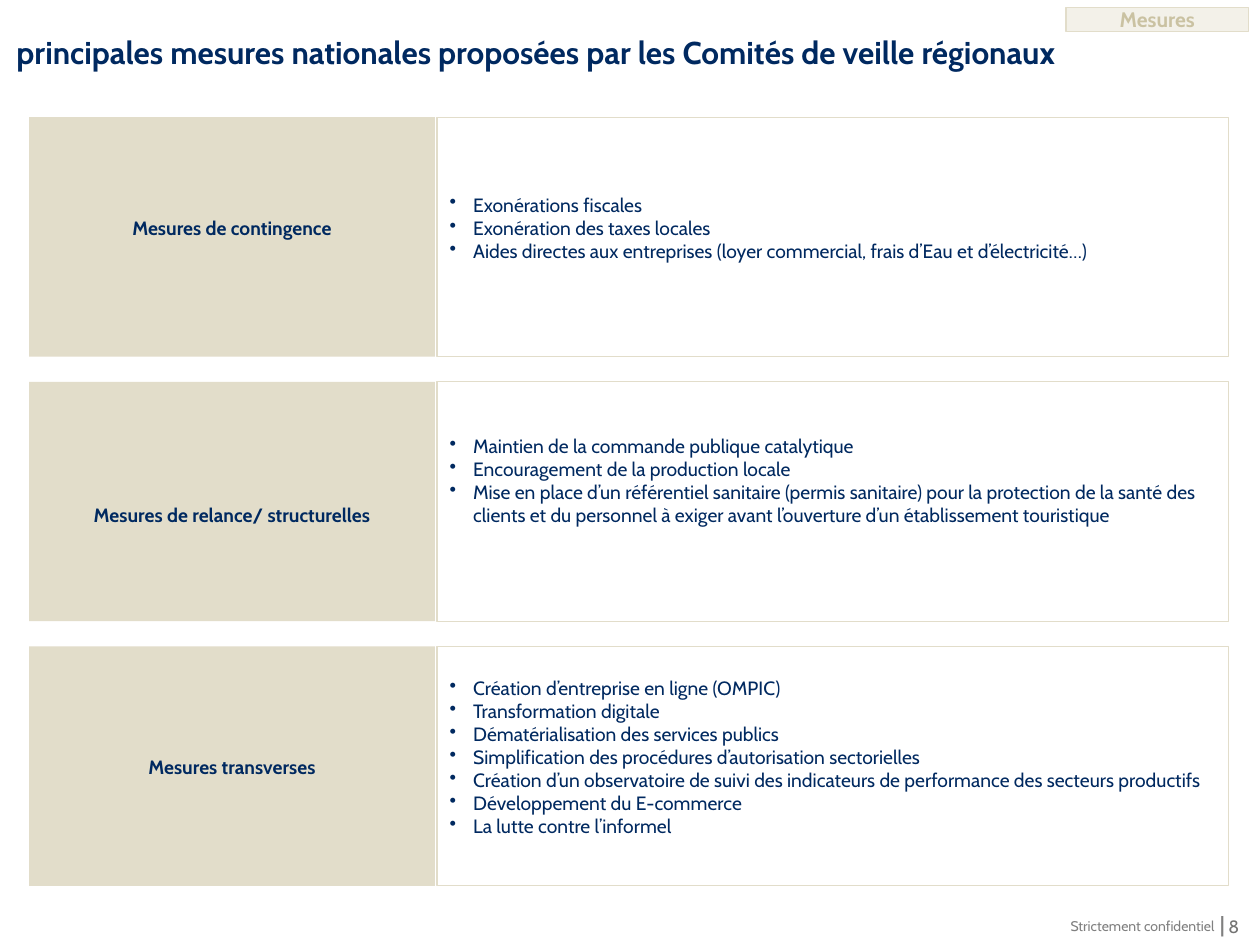
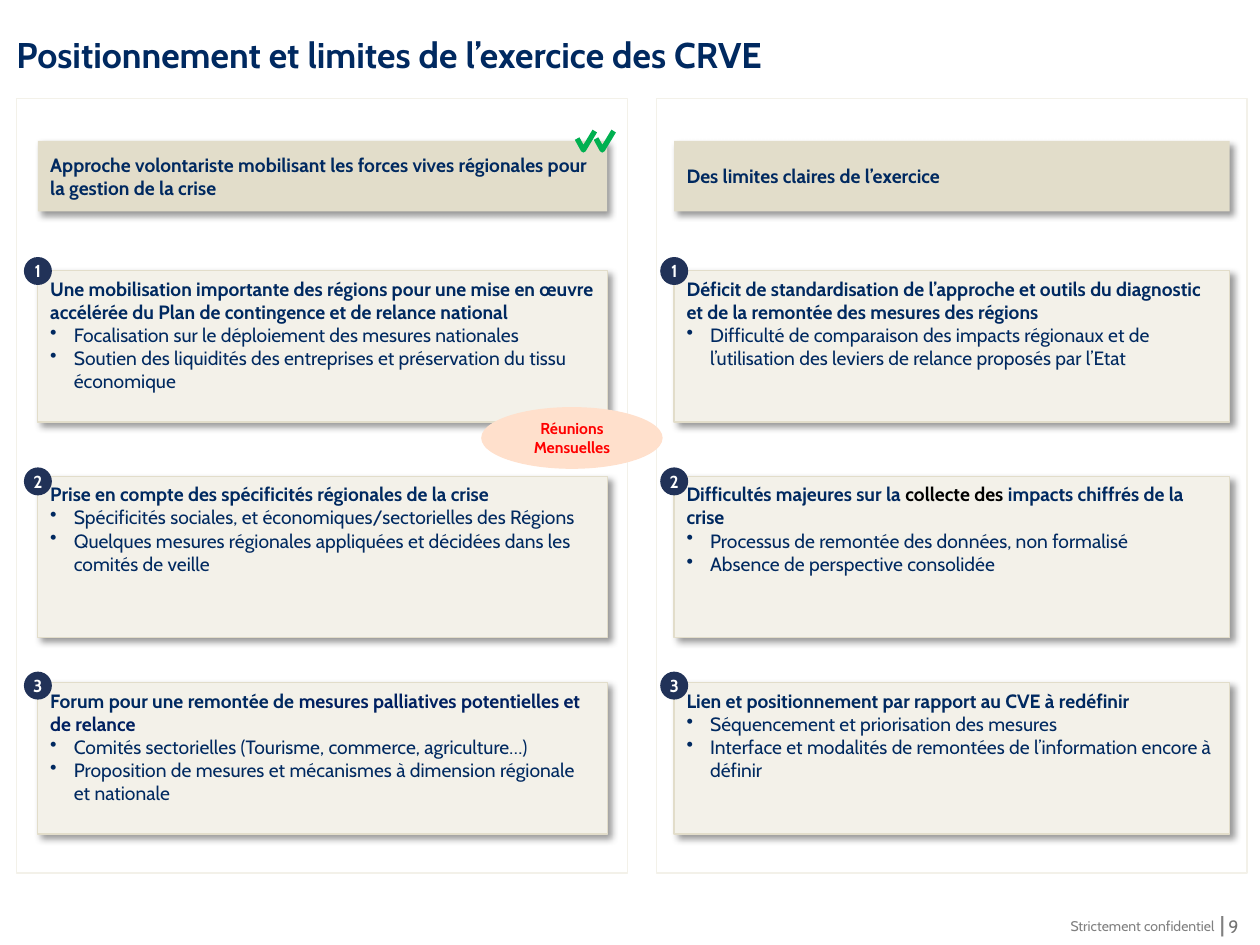
from dataclasses import dataclass
from typing import NamedTuple

from lxml.etree import SubElement
from pptx import Presentation
from pptx.dml.color import RGBColor
from pptx.enum.shapes import MSO_SHAPE as Shape
from pptx.enum.text import MSO_ANCHOR as Anchor, MSO_AUTO_SIZE as AutoSize, PP_ALIGN as Align
from pptx.oxml.ns import qn
from pptx.util import Pt

FONT = "Cabin"
NAVY, DEEP_NAVY, BADGE_NAVY = "002960", "002060", "213258"
SAND, PALE_SAND, DARK_SAND = "E2DDCA", "F3F1E9", "CAC2A2"
WHITE, BLACK, GREY, PAGE_GREY = "FFFFFF", "000000", "808080", "747473"
GREEN, RED, PEACH = "00B050", "FF0000", "FFE0CC"
BODY_SIZE, LINE_HEIGHT = 11, 13.2
INSETS, NO_INSETS = (7.2, 3.6, 7.2, 3.6), (0, 0, 0, 0)


class Box(NamedTuple):
    left: float
    top: float
    width: float
    height: float


class Span(NamedTuple):
    """A piece of a heading; without a colour it takes that of its paragraph."""
    text: str
    color: str | None = None


@dataclass
class Look:
    fill: str
    line: str | None = None
    line_width: float = 0.75
    shadow: bool = False


@dataclass
class Style:
    size: float = BODY_SIZE
    color: str = NAVY
    bold: bool = False
    align: Align = Align.LEFT
    bullet: bool = False


@dataclass
class Measure:
    label: str
    label_drop: float
    items: list[str]
    items_drop: float


@dataclass
class Card:
    heading: list[Span]
    items: list[str]


@dataclass
class Column:
    panel_left: float
    panel_width: float
    left: float
    width: float
    header: str
    cards: list[Card]


class Row(NamedTuple):
    top: float
    height: float
    badge_top: float


BULLET = Style(bullet=True)
HEADING = Style(bold=True)
LABEL = Style(bold=True, align=Align.CENTER)

# Drops are counted in body text lines below the top of the box.
MEASURES = [
    Measure("Mesures de contingence", 4, [
        "Exonérations fiscales",
        "Exonération des taxes locales",
        "Aides directes aux entreprises (loyer commercial, frais d’Eau et d’électricité…)",
    ], 3),
    Measure("Mesures de relance/ structurelles", 5, [
        "Maintien de la commande publique catalytique",
        "Encouragement de la production locale",
        "Mise en place d’un référentiel sanitaire (permis sanitaire) pour la protection de la "
        "santé des clients et du personnel à exiger avant l’ouverture d’un établissement touristique",
    ], 2),
    Measure("Mesures transverses", 4.45, [
        "Création d’entreprise en ligne (OMPIC)",
        "Transformation digitale",
        "Dématérialisation des services publics",
        "Simplification des procédures d’autorisation sectorielles",
        "Création d’un observatoire de suivi des indicateurs de performance des secteurs productifs",
        "Développement du E-commerce",
        "La lutte contre l’informel",
    ], 1),
]

ROWS = [Row(154.8, 86.4, 146.9), Row(272.2, 92.2, 267.1), Row(390.2, 86.4, 383.8)]

COLUMNS = [
    Column(9.4, 349.2, 21.6, 325.4,
           "Approche volontariste mobilisant les forces vives régionales pour la gestion de la crise", [
               Card([Span("Une mobilisation importante des régions pour une mise en œuvre accélérée "
                          "du Plan de contingence et de relance national")],
                    ["Focalisation sur le déploiement des mesures nationales",
                     "Soutien des liquidités des entreprises et préservation du tissu économique"]),
               Card([Span("Prise en compte des spécificités régionales de la crise")],
                    ["Spécificités sociales, et économiques/sectorielles des Régions",
                     "Quelques mesures régionales appliquées et décidées dans les comités de veille"]),
               Card([Span("Forum pour une remontée de "),
                     Span("mesures palliatives potentielles et de relance", DEEP_NAVY)],
                    ["Comités sectorielles (Tourisme, commerce, agriculture…)",
                     "Proposition de mesures et mécanismes à dimension régionale et nationale"]),
           ]),
    Column(375.1, 337.7, 385.2, 317.5, "Des limites claires de l’exercice", [
        Card([Span("Déficit de standardisation de l’approche et outils du diagnostic et de la "
                   "remontée des mesures des régions")],
             ["Difficulté de comparaison des impacts régionaux et de l’utilisation des leviers "
              "de relance proposés par l’Etat"]),
        Card([Span("Difficultés majeures sur la "), Span("collecte des ", BLACK),
              Span("impacts chiffrés de la crise")],
             ["Processus de remontée des données, non formalisé",
              "Absence de perspective consolidée"]),
        Card([Span("Lien et positionnement par rapport au CVE à redéfinir")],
             ["Séquencement et priorisation des mesures",
              "Interface et modalités de remontées de l’information encore à définir"]),
    ]),
]


def rgb(color: str) -> RGBColor:
    return RGBColor.from_string(color)


def points(box: Box) -> list[Pt]:
    return [Pt(length) for length in box]


def set_frame(frame, insets=INSETS, anchor=Anchor.TOP, wrap: bool = True) -> None:
    frame.margin_left, frame.margin_top, frame.margin_right, frame.margin_bottom = map(Pt, insets)
    frame.vertical_anchor = anchor
    frame.word_wrap = wrap


def style_paragraph(paragraph, style: Style) -> None:
    paragraph.alignment = style.align
    if style.bullet:
        props = paragraph._p.get_or_add_pPr()
        props.set("marL", str(Pt(13.5)))
        props.set("indent", str(-Pt(13.5)))
        SubElement(props, qn("a:buChar"), char="•")
    font = paragraph.font
    font.name, font.size, font.bold = FONT, Pt(style.size), style.bold
    font.color.rgb = rgb(style.color)


def write(frame, lines: list[tuple[list[Span], Style]]) -> None:
    for index, (spans, style) in enumerate(lines):
        paragraph = frame.add_paragraph() if index else frame.paragraphs[0]
        style_paragraph(paragraph, style)
        for span in spans:
            run = paragraph.add_run()
            run.text = span.text
            if span.color:
                run.font.color.rgb = rgb(span.color)


def plain(text: str, style: Style) -> list[tuple[list[Span], Style]]:
    return [([Span(text)], style)]


def bullets(items: list[str]) -> list[tuple[list[Span], Style]]:
    return [([Span(item)], BULLET) for item in items]


def add_shadow(shape) -> None:
    effects = shape._element.spPr.find(qn("a:effectLst"))
    outer = SubElement(effects, qn("a:outerShdw"), blurRad=str(Pt(4)), dist=str(Pt(3)),
                       dir="2700000", algn="tl", rotWithShape="0")
    SubElement(SubElement(outer, qn("a:srgbClr"), val=BLACK), qn("a:alpha"), val="40000")


def add_block(slide, kind: Shape, box: Box, look: Look, lines=(), **frame_options) -> None:
    shape = slide.shapes.add_shape(kind, *points(box))
    shape.fill.solid()
    shape.fill.fore_color.rgb = rgb(look.fill)
    if look.line:
        shape.line.color.rgb = rgb(look.line)
        shape.line.width = Pt(look.line_width)
    else:
        shape.line.fill.background()
    shape.shadow.inherit = False
    if look.shadow:
        add_shadow(shape)
    set_frame(shape.text_frame, **frame_options)
    write(shape.text_frame, lines)


def add_text(slide, box: Box, text: str, style: Style, **frame_options) -> None:
    frame = slide.shapes.add_textbox(*points(box)).text_frame
    set_frame(frame, **frame_options)
    write(frame, plain(text, style))


def add_slide(prs, title: str, title_size: float, page: int):
    """Add a title-only slide with its title and footer."""
    slide = prs.slides.add_slide(prs.slide_layouts[5])
    heading = slide.shapes.title
    heading.left, heading.top, heading.width, heading.height = points(
        Box(9.4, 18.7, 692.6, title_size * 1.2))
    set_frame(heading.text_frame, NO_INSETS)
    heading.text_frame.auto_size = AutoSize.NONE
    write(heading.text_frame, plain(title, Style(title_size, bold=True)))

    add_text(slide, Box(697, 520.6, 2.9, 14.4), "|", Style(12.2, GREY, True, Align.RIGHT),
             insets=NO_INSETS, anchor=Anchor.MIDDLE, wrap=False)
    add_text(slide, Box(702, 523.4, 16.6, 12.2), str(page), Style(10.2, PAGE_GREY),
             insets=NO_INSETS, wrap=False)
    add_text(slide, Box(551.5, 520.6, 150.5, 17.3), "Strictement confidentiel",
             Style(8, GREY, align=Align.RIGHT), insets=(7.9, 3.6, 7.9, 3.6))
    return slide


def dropped(line_count: float) -> tuple[float, float, float, float]:
    """Insets that start the text a number of lines lower."""
    left, top, right, bottom = INSETS
    return left, round(top + line_count * LINE_HEIGHT, 2), right, bottom


def build_measures(prs) -> None:
    slide = add_slide(
        prs, "principales mesures nationales proposées par les Comités de veille régionaux", 18, 8)
    for index, measure in enumerate(MEASURES):
        top = 67 + index * 151.2
        add_block(slide, Shape.RECTANGLE, Box(16.6, top, 232, 136.8), Look(SAND),
                  plain(measure.label, LABEL), insets=dropped(measure.label_drop))
        add_block(slide, Shape.RECTANGLE, Box(249.8, top, 452.2, 136.8), Look(WHITE, SAND),
                  bullets(measure.items), insets=dropped(measure.items_drop))
    add_block(slide, Shape.RECTANGLE, Box(609.1, 4.3, 104.4, 13.7), Look(PALE_SAND, SAND),
              plain("Mesures", Style(12, DARK_SAND, True, Align.CENTER)),
              insets=NO_INSETS, anchor=Anchor.MIDDLE)


def add_check_mark(slide, left: float, top: float) -> None:
    builder = slide.shapes.build_freeform(Pt(left), Pt(top + 4.3))
    builder.add_line_segments(
        [(Pt(left + 3.6), Pt(top + 10.8)), (Pt(left + 10.1), Pt(top))], close=False)
    mark = builder.convert_to_shape()
    mark.fill.background()
    mark.line.color.rgb = rgb(GREEN)
    mark.line.width = Pt(3)
    mark.shadow.inherit = False


def build_positioning(prs) -> None:
    slide = add_slide(prs, "Positionnement et limites de l’exercice des CRVE", 20.4, 9)
    for column in COLUMNS:
        add_block(slide, Shape.RECTANGLE, Box(column.panel_left, 56.2, column.panel_width, 442.8),
                  Look(WHITE, PALE_SAND, 1))
        add_block(slide, Shape.RECTANGLE, Box(column.left, 80.6, column.width, 40.3),
                  Look(SAND, shadow=True), plain(column.header, HEADING), anchor=Anchor.MIDDLE)
        for number, (row, card) in enumerate(zip(ROWS, column.cards), 1):
            add_block(slide, Shape.RECTANGLE, Box(column.left, row.top, column.width, row.height),
                      Look(PALE_SAND, SAND, shadow=True),
                      [(card.heading, HEADING), *bullets(card.items)])
            add_block(slide, Shape.OVAL, Box(column.left - 7.9, row.badge_top, 16, 16),
                      Look(BADGE_NAVY), plain(str(number), Style(9.9, WHITE, True, Align.CENTER)),
                      insets=NO_INSETS, anchor=Anchor.MIDDLE, wrap=False)
    for left in (329.8, 340.6):
        add_check_mark(slide, left, 74.9)
    add_block(slide, Shape.OVAL, Box(275, 232.6, 103.7, 35.3), Look(PEACH),
              plain("Réunions Mensuelles", Style(9, RED, True, Align.CENTER)),
              insets=NO_INSETS, anchor=Anchor.MIDDLE)


def main() -> None:
    prs = Presentation()
    prs.slide_width, prs.slide_height = Pt(720), Pt(540)
    build_measures(prs)
    build_positioning(prs)
    prs.save("out.pptx")


if __name__ == "__main__":
    main()
